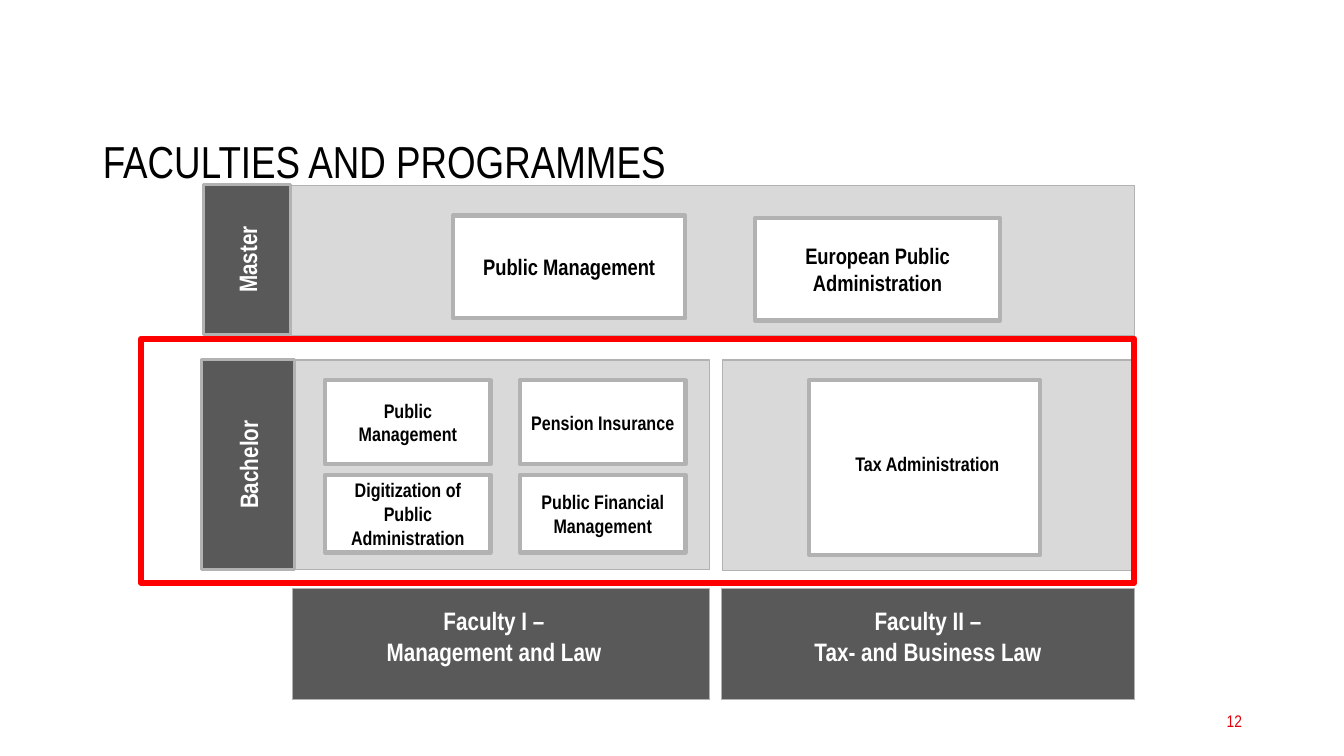
from dataclasses import dataclass

import pptx
import pptx.dml.color
import pptx.enum.shapes
import pptx.enum.text
import pptx.util

FONT = "Arial Narrow"
COLORS = {
    "black": "000000", "white": "FFFFFF", "dark": "595959", "panel": "D9D9D9",
    "border": "B2B2B2", "number": "E2000B", "highlight": "FF0000",
}
ALIGN = pptx.enum.text.PP_ALIGN
ANCHOR = pptx.enum.text.MSO_ANCHOR

# The slide is a grid of 100 columns by 100 rows
presentation = pptx.Presentation()
presentation.slide_width = pptx.util.Inches(13.33)
presentation.slide_height = pptx.util.Inches(7.5)
COLUMN = presentation.slide_width / 100
ROW = presentation.slide_height / 100


@dataclass(frozen=True)
class Style:
    fill: str | None
    border: str
    border_points: float
    text_color: str = "black"
    vertical_inset: float = 0
    anchor: ANCHOR = ANCHOR.MIDDLE
    rotated: bool = False


@dataclass(frozen=True)
class Block:
    style: Style
    column: float
    row: float
    columns: float
    rows: float
    text: str = ""
    size: int = 18
    line_points: float | None = None
    left_extra: float = 0
    right_extra: float = 0
    bottom_extra: float = 0


PANEL = Style("panel", "border", 1)
PROGRAMME = Style("white", "border", 3)
LEVEL = Style("dark", "border", 2.25, "white", 5.8, rotated=True)
FACULTY = Style("dark", "border", 0.75, "white", 12, ANCHOR.TOP)
HIGHLIGHT = Style(None, "highlight", 4.5)

LEFT, RIGHT = 24.2, 38.7  # bachelor programme columns
UPPER, LOWER = 50.3, 62.8  # bachelor programme rows
BACHELOR_ROW = 47.6

BLOCKS = [
    # Background panels
    Block(PANEL, 53.75, BACHELOR_ROW, 30.6, 27.9),
    Block(PANEL, 21.7, 24.5, 62.7, 19.9),
    Block(PANEL, 20.8, BACHELOR_ROW, 32, 27.75),
    # Level labels
    Block(LEVEL, 15.15, 24.4, 6.45, 19.9, "Master"),
    Block(LEVEL, 15, BACHELOR_ROW, 6.9, 27.75, "Bachelor"),
    # Master programmes
    Block(PROGRAMME, 33.7, 28.5, 17.3, 13.6, "Public Management", 16),
    Block(PROGRAMME, 56.2, 28.8, 18.2, 13.6, "European Public Administration", 16),
    # Bachelor programmes
    Block(PROGRAMME, LEFT, UPPER, 12.3, 11.1, "Public Management", 14),
    Block(PROGRAMME, RIGHT, UPPER, 12.3, 11.1, "Pension Insurance", 14, 17),
    Block(PROGRAMME, LEFT, LOWER, 12.3, 10.3,
          "Digitization of Public Administration", 14, 17),
    Block(PROGRAMME, RIGHT, LOWER, 12.3, 10.3,
          "Public Financial Management", 14, 17),
    Block(PROGRAMME, 60.2, UPPER, 17.2, 23.1, "Tax Administration", 14,
          left_extra=4, bottom_extra=6),
    # Faculties
    Block(FACULTY, 21.75, 77.9, 31.05, 14.7,
          "Faculty I –\nManagement and Law", right_extra=10),
    Block(FACULTY, 53.7, 77.9, 30.7, 14.7,
          "Faculty II –\nTax- and Business Law"),
    # Highlight around the bachelor level
    Block(HIGHLIGHT, 10.5, 44.8, 73.9, 32.3),
]


def rgb(name: str) -> pptx.dml.color.RGBColor:
    return pptx.dml.color.RGBColor.from_string(COLORS[name])


def place(column: float, row: float, columns: float, rows: float) -> list[int]:
    return [round(column * COLUMN), round(row * ROW),
            round(columns * COLUMN), round(rows * ROW)]


def write(text_frame, text: str, size: float, color: str, align: ALIGN,
          bold: bool = False, spacing=None) -> None:
    text_frame.text = text
    text_frame.word_wrap = True
    for paragraph in text_frame.paragraphs:
        paragraph.alignment = align
        paragraph.line_spacing = spacing
        for run in paragraph.runs:
            run.font.name = FONT
            run.font.size = pptx.util.Pt(size)
            run.font.bold = bold
            run.font.color.rgb = rgb(color)


def draw_block(slide, block: Block) -> None:
    style = block.style
    shape = slide.shapes.add_shape(
        pptx.enum.shapes.MSO_SHAPE.RECTANGLE,
        *place(block.column, block.row, block.columns, block.rows))
    shape.shadow.inherit = False
    if style.fill:
        shape.fill.solid()
        shape.fill.fore_color.rgb = rgb(style.fill)
    else:
        shape.fill.background()
    shape.line.color.rgb = rgb(style.border)
    shape.line.width = pptx.util.Pt(style.border_points)
    if not block.text:
        return
    text_frame = shape.text_frame
    text_frame.vertical_anchor = style.anchor
    text_frame.margin_left = pptx.util.Pt(5.8 + block.left_extra)
    text_frame.margin_right = pptx.util.Pt(5.8 + block.right_extra)
    text_frame.margin_top = pptx.util.Pt(style.vertical_inset)
    text_frame.margin_bottom = pptx.util.Pt(style.vertical_inset + block.bottom_extra)
    spacing = pptx.util.Pt(block.line_points) if block.line_points else None
    write(text_frame, block.text, block.size, style.text_color,
          ALIGN.CENTER, True, spacing)
    if style.rotated:
        text_frame._txBody.bodyPr.set("vert", "vert270")


def main() -> None:
    slide = presentation.slides.add_slide(presentation.slide_layouts[5])

    # Title
    title = slide.shapes.title
    title.left, title.top, title.width, title.height = place(6.9, 14.55, 86.25, 14.25)
    title.text_frame.auto_size = pptx.enum.text.MSO_AUTO_SIZE.NONE
    title.text_frame.vertical_anchor = ANCHOR.MIDDLE
    write(title.text_frame, "FACULTIES AND PROGRAMMES", 32, "black",
          ALIGN.LEFT, spacing=0.9)

    # Slide number
    number = slide.shapes.add_textbox(*place(70.65, 92.65, 22.5, 5.35))
    number.text_frame.vertical_anchor = ANCHOR.MIDDLE
    write(number.text_frame, "12", 12, "number", ALIGN.RIGHT)

    # Programme chart
    for block in BLOCKS:
        draw_block(slide, block)

    presentation.save("out.pptx")


if __name__ == "__main__":
    main()
